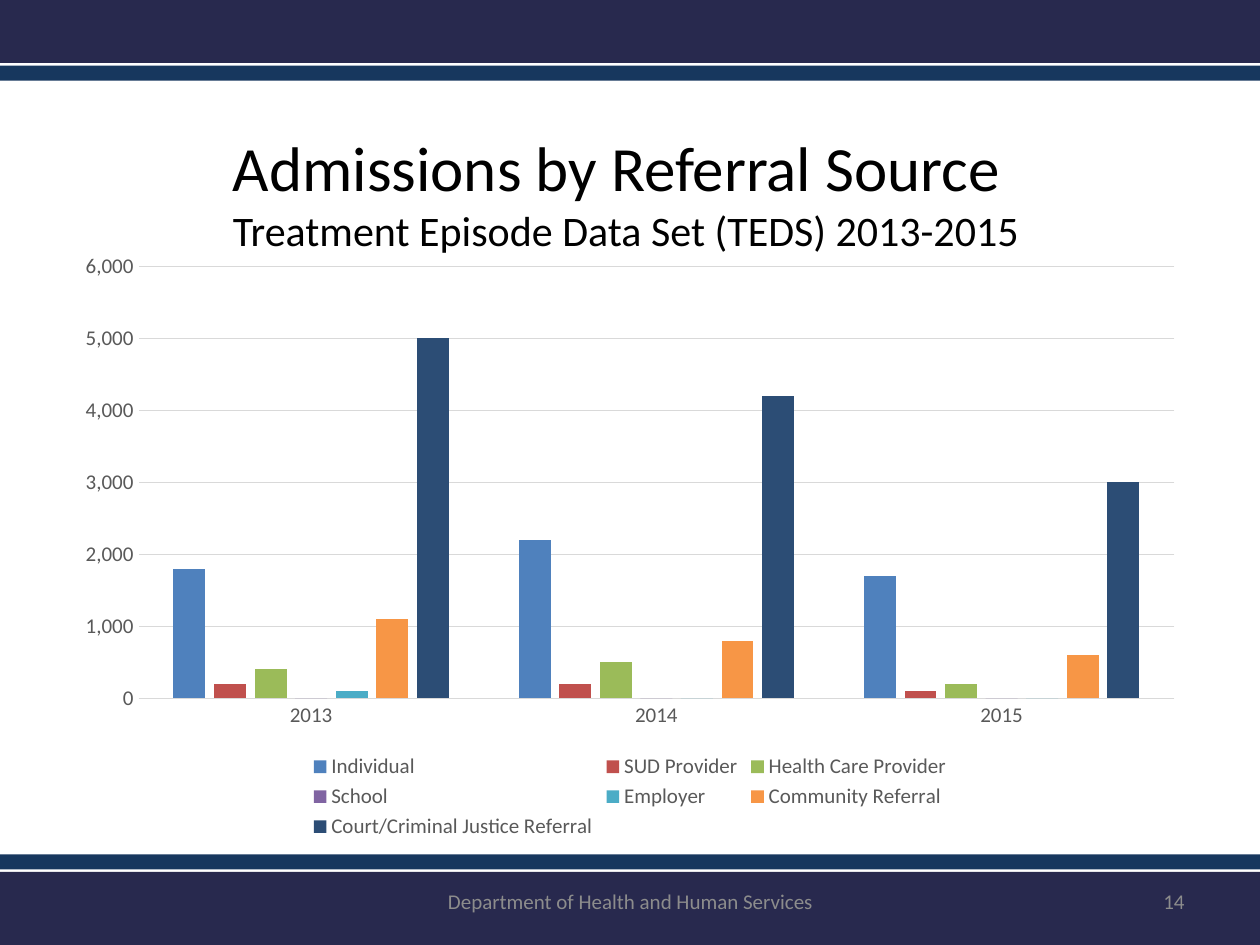
"""Build the slide of treatment admissions by referral source, 2013-2015."""
import pptx
import pptx.chart.data
import pptx.dml.color
import pptx.enum.chart
import pptx.enum.shapes
import pptx.enum.text
import pptx.util


def color(hex_string):
    return pptx.dml.color.RGBColor.from_string(hex_string)


def style_font(font, size, hex_string):
    font.name = "Calibri"
    font.size = pptx.util.Pt(size)
    font.bold = False
    font.color.rgb = color(hex_string)


presentation = pptx.Presentation()
presentation.slide_width = pptx.util.Inches(10)
presentation.slide_height = pptx.util.Inches(7.5)
slide = presentation.slides.add_slide(presentation.slide_layouts[6])
inches = pptx.util.Inches
align = pptx.enum.text.PP_ALIGN

for top, height, fill in [
    (0, 0.5, "28294E"),
    (0.52, 0.12, "17375E"),
    (6.92, 0.58, "28294E"),
    (6.78, 0.12, "17375E"),
]:
    band = slide.shapes.add_shape(
        pptx.enum.shapes.MSO_SHAPE.RECTANGLE,
        0, inches(top), presentation.slide_width, inches(height),
    )
    band.shadow.inherit = False
    band.fill.solid()
    band.fill.fore_color.rgb = color(fill)
    band.line.fill.background()

for left, width, text, alignment in [
    (3.42, 3.17, "Department of Health and Human Services", align.CENTER),
    (7.17, 2.33, "14", align.RIGHT),
]:
    footer = slide.shapes.add_textbox(inches(left), inches(6.95), inches(width), inches(0.4))
    footer.text_frame.word_wrap = True
    footer.text_frame.vertical_anchor = pptx.enum.text.MSO_ANCHOR.MIDDLE
    footer.text_frame.text = text
    paragraph = footer.text_frame.paragraphs[0]
    paragraph.alignment = alignment
    style_font(paragraph.runs[0].font, 12, "8C8C8C")

admissions = [
    ("Individual", (1800, 2200, 1700), "4F81BD"),
    ("SUD Provider", (200, 200, 100), "C0504D"),
    ("Health Care Provider", (400, 500, 200), "9BBB59"),
    ("School", (0, 0, 0), "8064A2"),
    ("Employer", (100, 0, 0), "4BACC6"),
    ("Community Referral", (1100, 800, 600), "F79646"),
    ("Court/Criminal Justice Referral", (5000, 4200, 3000), "2C4D75"),
]
chart_data = pptx.chart.data.CategoryChartData(number_format="#,##0")
chart_data.categories = ["2013", "2014", "2015"]
for name, values, fill in admissions:
    chart_data.add_series(name, values)
chart = slide.shapes.add_chart(
    pptx.enum.chart.XL_CHART_TYPE.COLUMN_CLUSTERED,
    inches(0.5), inches(1.92), inches(9), inches(4.78), chart_data,
).chart
style_font(chart.font, 10, "000000")
chart.has_title = False
chart.has_legend = True
chart.legend.position = pptx.enum.chart.XL_LEGEND_POSITION.BOTTOM
chart.legend.include_in_layout = False
style_font(chart.legend.font, 12, "595959")

plot = chart.plots[0]
plot.gap_width = 219
plot.overlap = -27
plot.vary_by_categories = False
for series, (name, values, fill) in zip(plot.series, admissions):
    series.format.fill.solid()
    series.format.fill.fore_color.rgb = color(fill)
    series.invert_if_negative = False

for axis in (chart.category_axis, chart.value_axis):
    axis.major_tick_mark = pptx.enum.chart.XL_TICK_MARK.NONE
    axis.minor_tick_mark = pptx.enum.chart.XL_TICK_MARK.NONE
    style_font(axis.tick_labels.font, 12, "595959")
chart.value_axis.minimum_scale = 0
chart.value_axis.maximum_scale = 6000
chart.value_axis.major_unit = 1000
chart.value_axis.tick_labels.number_format = "#,##0"
chart.value_axis.tick_labels.number_format_is_linked = False
chart.value_axis.format.line.fill.background()
for line in (chart.category_axis.format.line, chart.value_axis.major_gridlines.format.line):
    line.color.rgb = color("D9D9D9")
    line.width = pptx.util.Pt(0.75)

title = slide.shapes.add_textbox(inches(1.75), inches(0.97), inches(6.5), inches(1.11))
title.text_frame.word_wrap = False
title.text_frame.auto_size = pptx.enum.text.MSO_AUTO_SIZE.SHAPE_TO_FIT_TEXT
title.text_frame.text = "Admissions by Referral Source\nTreatment Episode Data Set (TEDS) 2013-2015"
for paragraph, size in zip(title.text_frame.paragraphs, (36, 24)):
    paragraph.alignment = align.LEFT
    style_font(paragraph.runs[0].font, size, "000000")

presentation.save("out.pptx")
